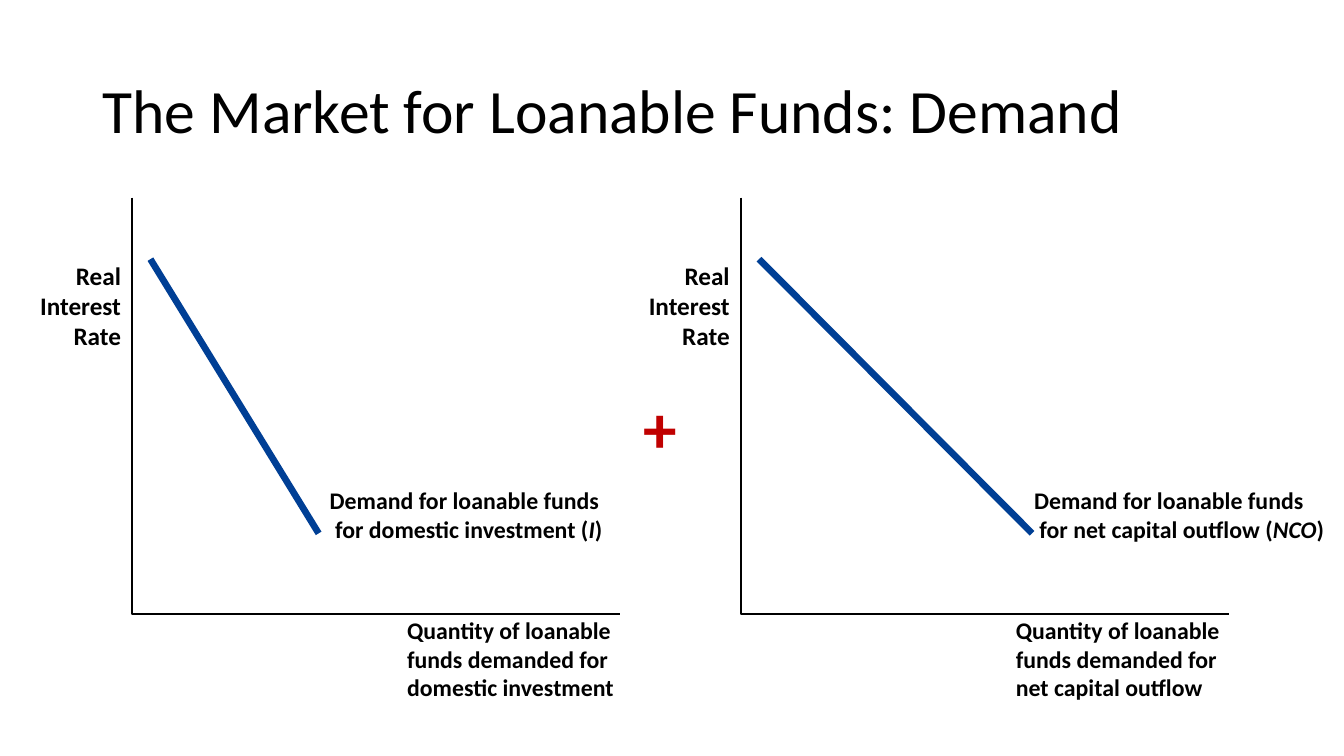
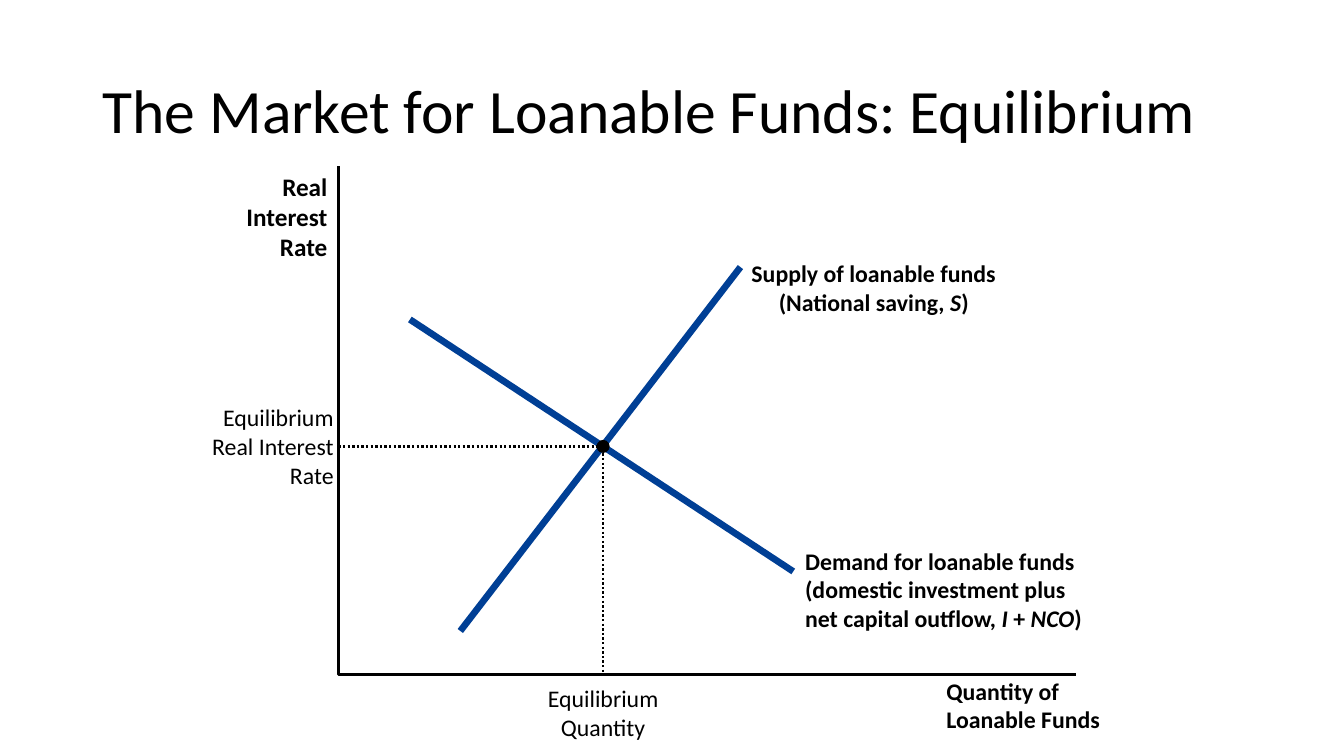
from pptx import Presentation
from pptx import util as u
from pptx.dml import color
from pptx.enum import dml, shapes, text
from pptx.oxml import ns, xmlchemy

HUES = {"ink": "000000", "curve": "003F95", "plus": "C00000"}
TITLE = {"name": "Calibri", "size": u.Pt(44)}
AXIS = {"name": "Calibri", "size": u.Pt(18), "bold": True}
LABEL = {"name": "Calibri", "size": u.Pt(17), "bold": True}
PLAIN = {"name": "Calibri", "size": u.Pt(17), "bold": False}
SIGN = {"name": "Calibri", "size": u.Pt(48), "bold": True}
INSETS = ("margin_left", "margin_top", "margin_right", "margin_bottom")
LEFT, MID, RIGHT = text.PP_ALIGN.LEFT, text.PP_ALIGN.CENTER, text.PP_ALIGN.RIGHT


def hue(key):
    return color.RGBColor.from_string(HUES[key])


def cm(*vals):
    return [u.Cm(val) for val in vals]


def style(font, form, key="ink"):
    for name, val in form.items():
        setattr(font, name, val)
    font.color.rgb = hue(key)


def write(slide, box, words, form, align=LEFT, key="ink", wrap=True, inset=0):
    frame = slide.shapes.add_textbox(*cm(*box)).text_frame
    frame.word_wrap = wrap
    if inset is not None:
        for side in INSETS:
            setattr(frame, side, inset)
    para = frame.paragraphs[0]
    para.alignment = align
    for row, line in enumerate(words.split("\n")):
        if row:
            para.add_line_break()
        for part, piece in enumerate(line.split("*")):
            if piece:
                run = para.add_run()
                run.text = piece
                style(run.font, {**form, "italic": part % 2 == 1}, key)


def trace(slide, points, dash=None):
    first, *rest = [cm(*point) for point in points]
    pen = slide.shapes.build_freeform(*first)
    pen.add_line_segments(rest, close=False)
    shape = pen.convert_to_shape()
    shape.shadow.inherit = False
    shape.fill.background()
    shape.line.color.rgb = hue("ink")
    shape.line.width = u.Pt(1.63)
    if dash:
        shape.line.dash_style = dash


def axes(slide, box, rate, goods, offset, width):
    x, y, w, h = box
    trace(slide, [(x, y), (x, y + h), (x + w, y + h)])
    write(slide, (x - 3.18, y + rate, 3.15, 2.57), "Real Interest Rate",
          AXIS, RIGHT, inset=None)
    write(slide, (x + offset, y + h + 0.05, width, 2.18), goods, LABEL)


def curve(slide, box, start, end, words, label, align=LEFT):
    x, y = box[:2]
    line = slide.shapes.add_connector(
        shapes.MSO_CONNECTOR.STRAIGHT,
        *cm(x + start[0], y + start[1], x + end[0], y + end[1]))
    line.line.color.rgb = hue("curve")
    line.line.width = u.Pt(4.75)
    props = line._element.spPr
    props.append(xmlchemy.OxmlElement("a:effectLst"))
    left, top, w, h = label
    write(slide, (x + left, y + top, w, h), words, LABEL, align, wrap=False)


def balance(slide, box, point):
    x, y, w, h = box
    px, py = x + point[0], y + point[1]
    trace(slide, [(x, py), (px, py), (px, y + h)], dml.MSO_LINE.ROUND_DOT)
    size = 0.33
    dot = slide.shapes.add_shape(
        shapes.MSO_SHAPE.OVAL, *cm(px - size / 2, py - size / 2, size, size))
    dot.shadow.inherit = False
    dot.fill.solid()
    dot.fill.fore_color.rgb = hue("ink")
    dot.line.fill.background()
    write(slide, (px - 1.44, y + h + 0.23, 2.88, 1.45),
          "Equilibrium Quantity", PLAIN, MID)
    write(slide, (x - 3.27, py - 1.09, 3.15, 2.18),
          "Equilibrium Real Interest Rate", PLAIN, RIGHT)


def page(deck, topic):
    slide = deck.slides.add_slide(deck.slide_layouts[5])
    title = slide.shapes.title
    title.left, title.top, title.width, title.height = cm(2.33, 1.01, 29.21, 3.68)
    frame = title.text_frame
    frame.text = f"The Market for Loanable Funds: {topic}"
    frame.vertical_anchor = text.MSO_ANCHOR.MIDDLE
    para = frame.paragraphs[0]
    para.alignment = LEFT
    para.line_spacing = 0.9
    style(para.runs[0].font, TITLE)
    return slide


def demand(deck):
    slide = page(deck, "Demand")
    panels = [
        (3.33, "domestic investment", "I", 4.7, (4.98, 7.26, 6.96, 1.45)),
        (18.67, "net capital outflow", "NCO", 7.34, (7.39, 7.26, 7.37, 1.45)),
    ]
    for left, use, sign, end, label in panels:
        box = (left, 4.98, 12.3, 10.49)
        axes(slide, box, 1.45, f"Quantity of loanable funds demanded for {use}",
             6.93, 5.26)
        curve(slide, box, (0.46, 1.55), (end, 8.46),
              f"Demand for loanable funds\n for {use} (*{sign}*)", label)
    write(slide, (15.01, 9.6, 3.25, 2.31), "+", SIGN, MID, "plus", inset=None)


def market(deck):
    slide = page(deck, "Equilibrium")
    box = (8.53, 4.19, 18.58, 12.81)
    axes(slide, box, 0, "Quantity of Loanable Funds", 15.32, 3.95)
    curve(slide, box, (3.07, 11.71), (10.13, 2.54),
          "Supply of loanable funds\n(National saving, *S*)",
          (10.39, 2.34, 6.2, 1.45), MID)
    curve(slide, box, (1.8, 3.86), (11.46, 10.21),
          "Demand for loanable funds\n(domestic investment plus\n"
          "net capital outflow, *I* + *NCO*)", (11.76, 9.58, 7.06, 2.18))
    balance(slide, box, (6.67, 7.06))


def main():
    deck = Presentation()
    deck.slide_width, deck.slide_height = cm(33.87, 19.05)
    demand(deck)
    market(deck)
    deck.save("out.pptx")


if __name__ == "__main__":
    main()
